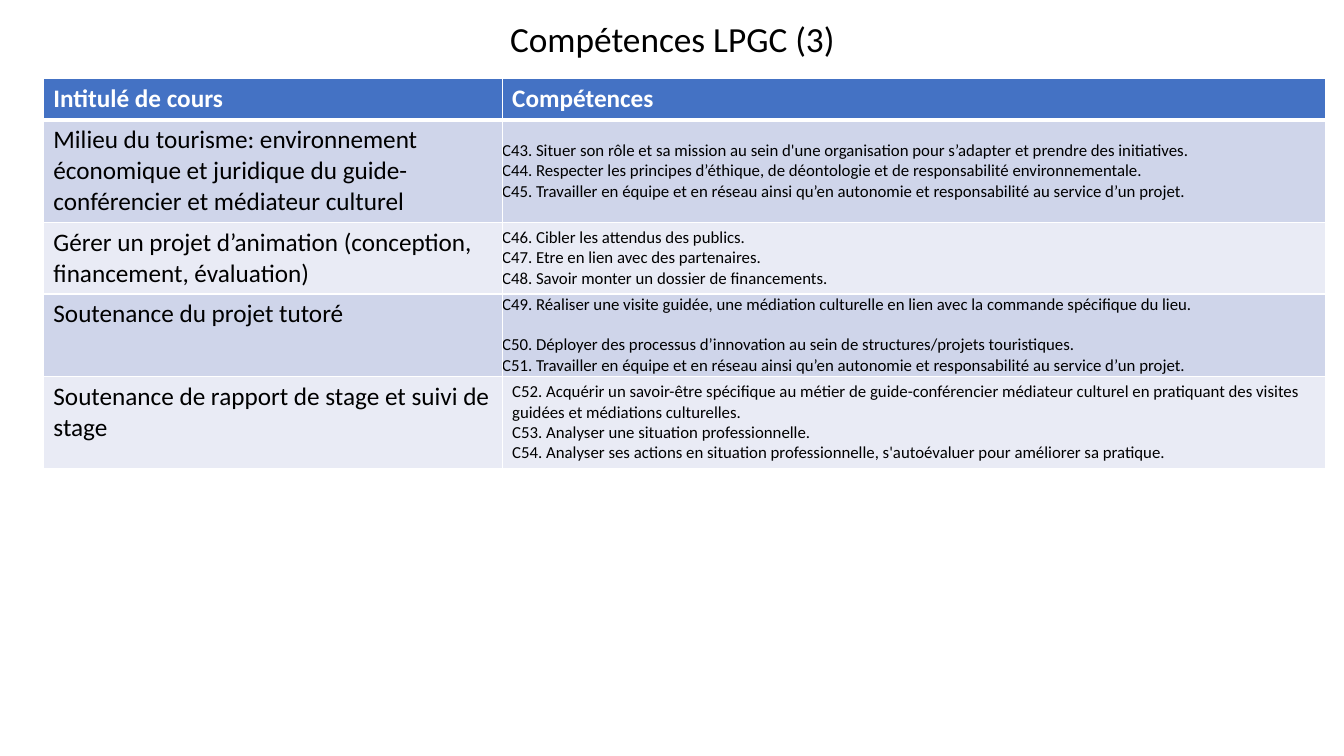
from dataclasses import dataclass

from lxml import etree
from pptx import Presentation
from pptx.dml.color import RGBColor
from pptx.enum.text import MSO_ANCHOR, MSO_AUTO_SIZE, PP_ALIGN
from pptx.oxml.ns import qn
from pptx.util import Pt

MIDDLE, TOP = MSO_ANCHOR.MIDDLE, MSO_ANCHOR.TOP
CENTER = PP_ALIGN.CENTER
NO_AUTOFIT = MSO_AUTO_SIZE.NONE
TITLE_ONLY = 5
EMU_PER_PX = 9144  # 100 px to the inch


@dataclass(frozen=True)
class Theme:
    font: str = "Calibri"
    text: str = "000000"
    header_text: str = "FFFFFF"
    header_fill: str = "4472C4"
    bands: tuple[str, str] = ("CFD5EA", "E9EBF5")
    border: str = "FFFFFF"
    title_size: float = 25.2
    course_size: int = 18
    skill_size: int = 12
    thin: int = 1
    thick: int = 3


@dataclass(frozen=True)
class Course:
    name: str
    skills: tuple[str, ...]
    height: int
    flush: bool = True  # skills centred vertically, without margins
    first_gap: int = 0  # points after the first skill


THEME = Theme()
TITLE = "Compétences LPGC (3)"
HEADERS = ("Intitulé de cours", "Compétences")
HEADER_HEIGHT = 41
COLUMNS = (455, 817)
COURSES = (
    Course(
        "Milieu du tourisme: environnement économique et juridique du "
        "guide-conférencier et médiateur culturel",
        ("C43. Situer son rôle et sa mission au sein d'une organisation pour "
         "s’adapter et prendre des initiatives.",
         "C44. Respecter les principes d’éthique, de déontologie et de "
         "responsabilité environnementale.",
         "C45. Travailler en équipe et en réseau ainsi qu’en autonomie et "
         "responsabilité au service d’un projet."),
        100),
    Course(
        "Gérer un projet d’animation (conception, financement, évaluation)",
        ("C46. Cibler les attendus des publics.",
         "C47. Etre en lien avec des partenaires.",
         "C48. Savoir monter un dossier de financements."),
        71),
    Course(
        "Soutenance du projet tutoré",
        ("C49. Réaliser une visite guidée, une médiation culturelle en lien "
         "avec la commande spécifique du lieu.",
         "C50. Déployer des processus d’innovation au sein de "
         "structures/projets touristiques.",
         "C51. Travailler en équipe et en réseau ainsi qu’en autonomie et "
         "responsabilité au service d’un projet."),
        82, first_gap=14),
    Course(
        "Soutenance de rapport de stage et suivi de stage",
        ("C52. Acquérir un savoir-être spécifique au métier de "
         "guide-conférencier médiateur culturel en pratiquant des visites "
         "guidées et médiations culturelles.",
         "C53. Analyser une situation professionnelle.",
         "C54. Analyser ses actions en situation professionnelle, "
         "s'autoévaluer pour améliorer sa pratique."),
        91, flush=False),
)


def px(n: int) -> int:
    return n * EMU_PER_PX


def add_run(p, text: str, size: float, color: str, bold: bool = False) -> None:
    r = p.add_run()
    r.text = text
    r.font.name = THEME.font
    r.font.size = Pt(size)
    r.font.bold = bold
    r.font.color.rgb = RGBColor.from_string(color)


def set_borders(cell, top: int, bottom: int) -> None:
    tc_pr = cell._tc.get_or_add_tcPr()
    widths = {"lnL": THEME.thin, "lnR": THEME.thin, "lnT": top, "lnB": bottom}
    for side, width in widths.items():
        ln = etree.SubElement(tc_pr, qn(f"a:{side}"), w=str(Pt(width)))
        fill = etree.SubElement(ln, qn("a:solidFill"))
        etree.SubElement(fill, qn("a:srgbClr"), val=THEME.border)


def fill_cell(cell, lines: tuple[str, ...], size: int, color: str, fill: str,
              top: int, bottom: int, bold: bool = False,
              flush: bool = False, first_gap: int = 0) -> None:
    set_borders(cell, top, bottom)
    cell.fill.solid()
    cell.fill.fore_color.rgb = RGBColor.from_string(fill)
    cell.vertical_anchor = MIDDLE if flush else TOP
    if flush:
        cell.margin_left = cell.margin_right = 0
        cell.margin_top = cell.margin_bottom = 0
    tf = cell.text_frame
    for i, line in enumerate(lines):
        p = tf.add_paragraph() if i else tf.paragraphs[0]
        add_run(p, line, size, color, bold)
    if first_gap:
        tf.paragraphs[0].space_after = Pt(first_gap)


def add_title(s) -> None:
    sp = s.shapes.title
    sp.left, sp.top, sp.width, sp.height = map(px, (92, 22, 1150, 43))
    tf = sp.text_frame
    tf.auto_size = NO_AUTOFIT
    tf.word_wrap = True
    tf.vertical_anchor = MIDDLE
    p = tf.paragraphs[0]
    p.alignment = CENTER
    p.line_spacing = 0.7
    add_run(p, TITLE, THEME.title_size, THEME.text)


def add_course_table(s) -> None:
    heights = [HEADER_HEIGHT] + [c.height for c in COURSES]
    table = s.shapes.add_table(
        len(heights), len(COLUMNS), px(43), px(78),
        px(sum(COLUMNS)), px(sum(heights))).table
    for column, width in zip(table.columns, COLUMNS):
        column.width = px(width)
    for row, height in zip(table.rows, heights):
        row.height = px(height)

    # Header row
    for col, header in enumerate(HEADERS):
        fill_cell(table.cell(0, col), (header,), THEME.course_size,
                  THEME.header_text, THEME.header_fill,
                  THEME.thin, THEME.thick, bold=True)

    # Course rows, in alternating bands
    for i, course in enumerate(COURSES):
        band = THEME.bands[i % 2]
        top = THEME.thin if i else THEME.thick
        fill_cell(table.cell(i + 1, 0), (course.name,), THEME.course_size,
                  THEME.text, band, top, THEME.thin)
        fill_cell(table.cell(i + 1, 1), course.skills, THEME.skill_size,
                  THEME.text, band, top, THEME.thin,
                  flush=course.flush, first_gap=course.first_gap)


def main() -> None:
    prs = Presentation()
    prs.slide_width, prs.slide_height = px(1333), px(750)
    s = prs.slides.add_slide(prs.slide_layouts[TITLE_ONLY])
    add_title(s)
    add_course_table(s)
    prs.save("out.pptx")


if __name__ == "__main__":
    main()
